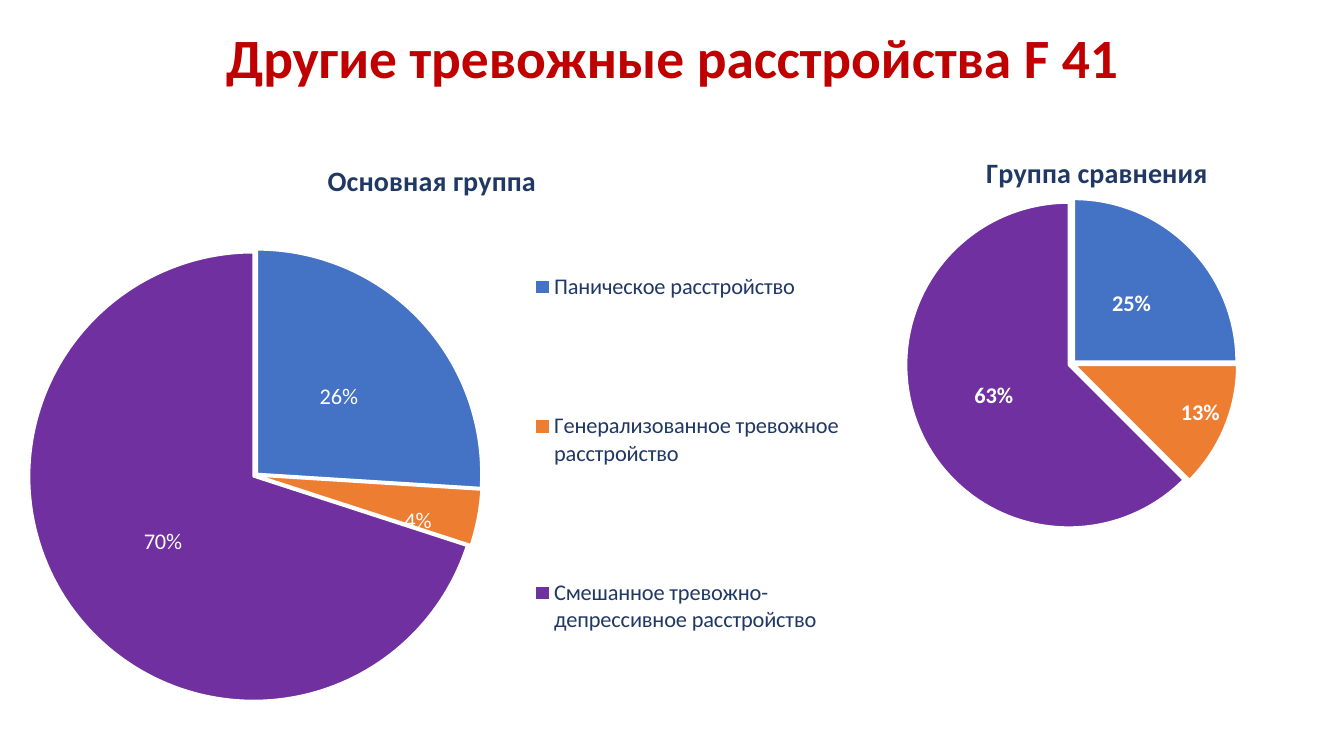
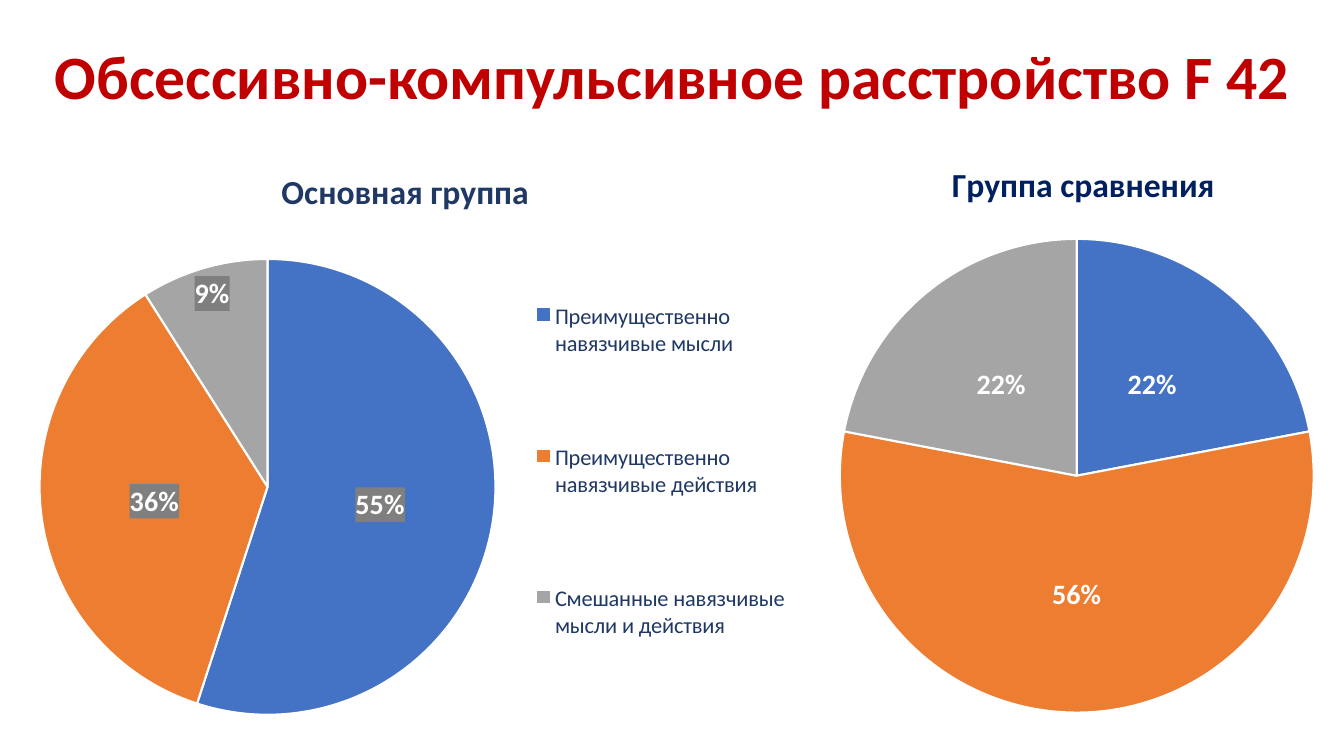
"""Two slides comparing diagnoses of the main and comparison groups in pie charts."""
import copy

import pptx
import pptx.chart.data
import pptx.dml.color
import pptx.enum.chart
import pptx.enum.text
import pptx.oxml
import pptx.oxml.ns
import pptx.util
from pptx.util import Inches

COLORS = {
    "heading": "C00000", "navy": "203864", "deep_navy": "002060", "white": "FFFFFF",
    "blue": "4472C4", "orange": "ED7D31", "violet": "7030A0", "gray": "A5A5A5",
    "label_back": "7F7F7F",
}
FONT = "Calibri"

SLIDES = [
    {
        "heading": "Другие тревожные расстройства F 41",
        "heading_box": (0.92, 0.27, 11.5, 0.67), "heading_size": 39.6,
        "slices": ("blue", "orange", "violet"), "title_size": 20, "label_size": 16,
        "groups": [
            {
                "title": "Основная группа", "title_color": "navy", "title_at": (0.37, 0.04),
                "box": (0.12, 1.3, 8.32, 6.1), "pie": (0.02, 0.19, 0.54, 0.74),
                "categories": ["Паническое расстройство",
                               "Генерализованное тревожное расстройство",
                               "Смешанное тревожно-депрессивное расстройство"],
                "values": (26, 4, 70), "legend": (0.61, 0.05, 0.39, 0.95),
                "explosion": 1, "label_bold": False, "label_shifts": {1: (0.06, 0.04)},
            },
            {
                "title": "Группа сравнения", "title_color": "navy", "title_at": (0.28, 0.05),
                "box": (8.33, 1.26, 5, 4.16), "pie": (0.13, 0.17, 0.66, 0.79),
                "categories": ["1", "2", "3"], "values": (24, 12, 60),
                "explosion": 2, "label_bold": True, "label_shifts": {1: (0.1, 0.04)},
            },
        ],
    },
    {
        "heading": "Обсессивно-компульсивное расстройство F 42",
        "heading_box": (0.16, 0.36, 13.03, 0.86), "heading_size": 44,
        "slices": ("blue", "orange", "gray"), "title_size": 24, "label_size": 20,
        "groups": [
            {
                "title": "Основная группа", "title_color": "navy", "title_at": (0.34, 0.05),
                "box": (0.08, 1.32, 7.8, 5.95), "pie": (0.04, 0.21, 0.58, 0.76),
                "categories": ["Преимущественно навязчивые мысли",
                               "Преимущественно навязчивые действия",
                               "Смешанные навязчивые мысли и действия"],
                "values": (55, 36, 9), "legend": (0.66, 0.14, 0.34, 0.85),
                "label_bold": True, "label_back": "label_back",
                "label_shifts": {2: (-0.03, -0.14)},
            },
            {
                "title": "Группа сравнения", "title_color": "deep_navy", "title_at": (0.24, 0.05),
                "box": (8.18, 1.24, 5, 6.16), "pie": (0.03, 0.18, 0.94, 0.77),
                "categories": ["1", "2", "3"], "values": (22, 56, 22), "label_bold": True,
            },
        ],
    },
]


def rgb(name):
    return pptx.dml.color.RGBColor.from_string(COLORS[name])


def style(font, size, color, bold=False):
    font.name, font.size, font.bold = FONT, pptx.util.Pt(size), bold
    font.color.rgb = rgb(color)


def chart_xml(tag, content="", attributes=""):
    names = pptx.oxml.ns.nsdecls("c", "a")
    return pptx.oxml.parse_xml(f"<c:{tag} {names} {attributes}>{content}</c:{tag}>")


def layout(numbers, modes=("xMode", "yMode"), inner=False):
    target = '<c:layoutTarget val="inner"/>' if inner else ""
    edges = "".join(f'<c:{mode} val="edge"/>' for mode in modes)
    sizes = "".join(f'<c:{key} val="{number}"/>' for key, number in zip("xywh", numbers))
    return chart_xml("layout", f"<c:manualLayout>{target}{edges}{sizes}</c:manualLayout>")


def place(parent, numbers, previous=None, inner=False):
    tag = pptx.oxml.ns.qn
    for old in parent.findall(tag("c:layout")):
        parent.remove(old)
    position = 0 if previous is None else parent.index(parent.find(tag(previous))) + 1
    parent.insert(position, layout(numbers, inner=inner))


def add_labels(series, holder_parent, group, size):
    labels = series.data_labels
    labels.show_value, labels.show_percentage = False, True
    labels.number_format, labels.number_format_is_linked = "0%", False
    labels.position = pptx.enum.chart.XL_LABEL_POSITION.CENTER
    style(labels.font, size, "white", group["label_bold"])
    holder = holder_parent.find(pptx.oxml.ns.qn("c:dLbls"))
    if "label_back" in group:
        fill = f'<a:solidFill><a:srgbClr val="{COLORS[group["label_back"]]}"/></a:solidFill>'
        holder.find(pptx.oxml.ns.qn("c:txPr")).addprevious(chart_xml("spPr", fill))
    shared = [part for part in holder if not part.tag.endswith("showLeaderLines")]
    for index, shift in group.get("label_shifts", {}).items():
        label = chart_xml("dLbl", f'<c:idx val="{index}"/>')
        label.append(layout(shift, modes=()))
        label.extend([copy.deepcopy(part) for part in shared])
        holder.insert(0, label)


def add_pie(slide, group, content):
    data = pptx.chart.data.CategoryChartData()
    data.categories = group["categories"]
    data.add_series("Series 1", group["values"])
    chart = slide.shapes.add_chart(
        pptx.enum.chart.XL_CHART_TYPE.PIE, *map(Inches, group["box"]), data).chart
    chart.font.name, chart.font.size = FONT, pptx.util.Pt(10)
    chart.plots[0].vary_by_categories = True
    root = chart.element

    chart.has_title = True
    title = chart.chart_title.text_frame.paragraphs[0]
    title.text = group["title"]
    style(title.font, content["title_size"], group["title_color"], True)
    place(root.find(".//{*}title"), group["title_at"], "c:tx")
    place(root.find(".//{*}plotArea"), group["pie"], inner=True)

    chart.has_legend = "legend" in group
    if chart.has_legend:
        chart.legend.position = pptx.enum.chart.XL_LEGEND_POSITION.RIGHT
        chart.legend.include_in_layout = False
        style(chart.legend.font, 16, "navy")
        place(root.find(".//{*}legend"), group["legend"], "c:legendPos")

    series = chart.plots[0].series[0]
    series_xml = root.find(".//{*}ser")
    for index, color in enumerate(content["slices"]):
        part = series.points[index].format
        part.fill.solid()
        part.fill.fore_color.rgb = rgb(color)
        part.line.color.rgb = rgb("white")
        part.line.width = pptx.util.Pt(1.5)
    if "explosion" in group:
        first_point = series_xml.find(pptx.oxml.ns.qn("c:dPt"))
        first_point.addprevious(chart_xml("explosion", attributes=f'val="{group["explosion"]}"'))
    add_labels(series, series_xml, group, content["label_size"])


def add_heading(slide, content):
    frame = slide.shapes.add_textbox(*map(Inches, content["heading_box"])).text_frame
    frame.word_wrap = True
    frame.vertical_anchor = pptx.enum.text.MSO_ANCHOR.MIDDLE
    heading = frame.paragraphs[0]
    heading.text = content["heading"]
    heading.alignment = pptx.enum.text.PP_ALIGN.CENTER
    heading.line_spacing = 0.9
    style(heading.font, content["heading_size"], "heading", True)


def main():
    deck = pptx.Presentation()
    deck.slide_width, deck.slide_height = Inches(13.33), Inches(7.5)
    for content in SLIDES:
        slide = deck.slides.add_slide(deck.slide_layouts[6])
        add_heading(slide, content)
        for group in content["groups"]:
            add_pie(slide, group, content)
    deck.save("out.pptx")


if __name__ == "__main__":
    main()
